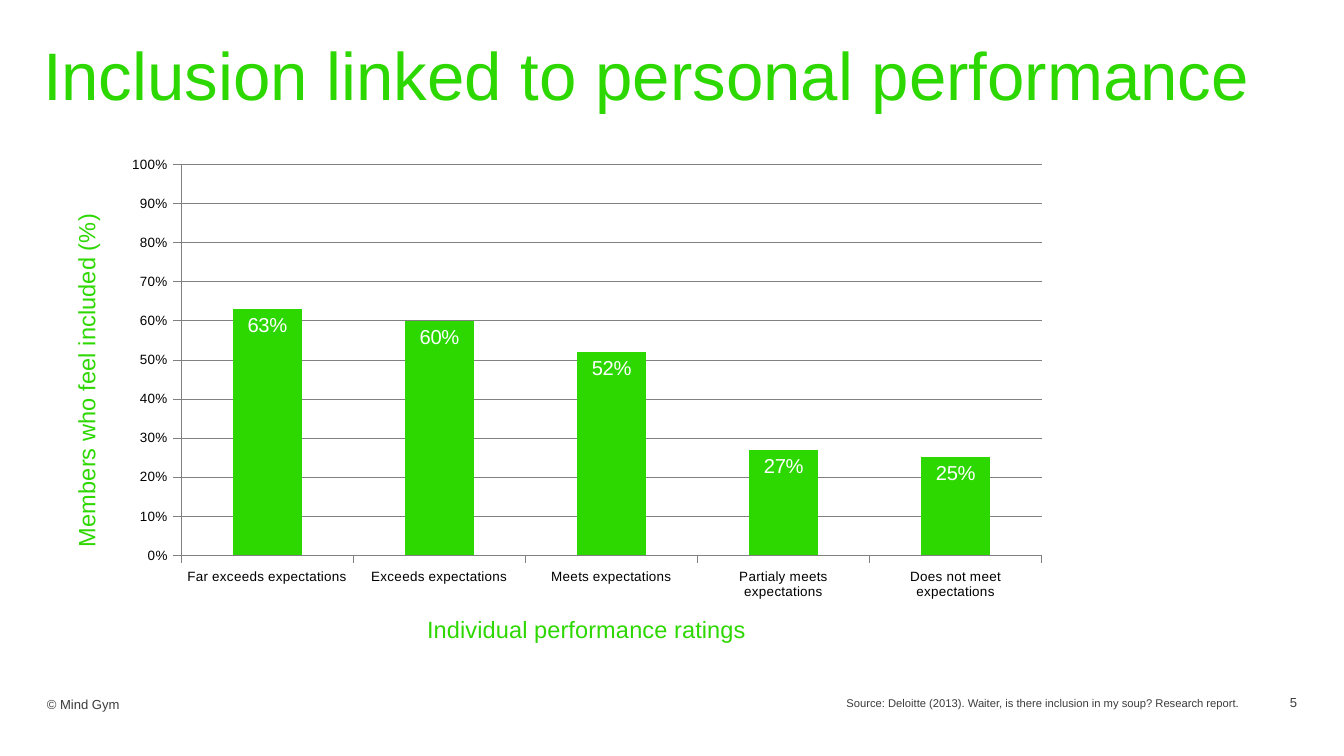
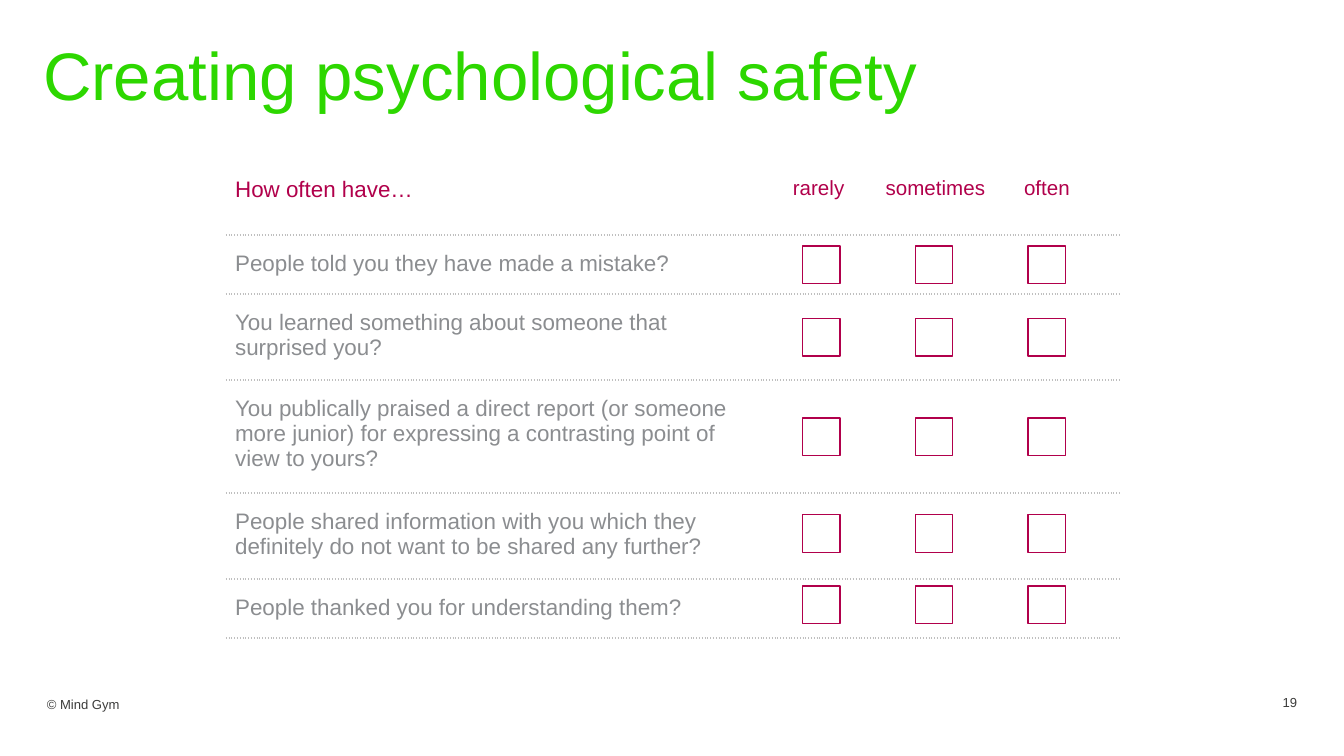
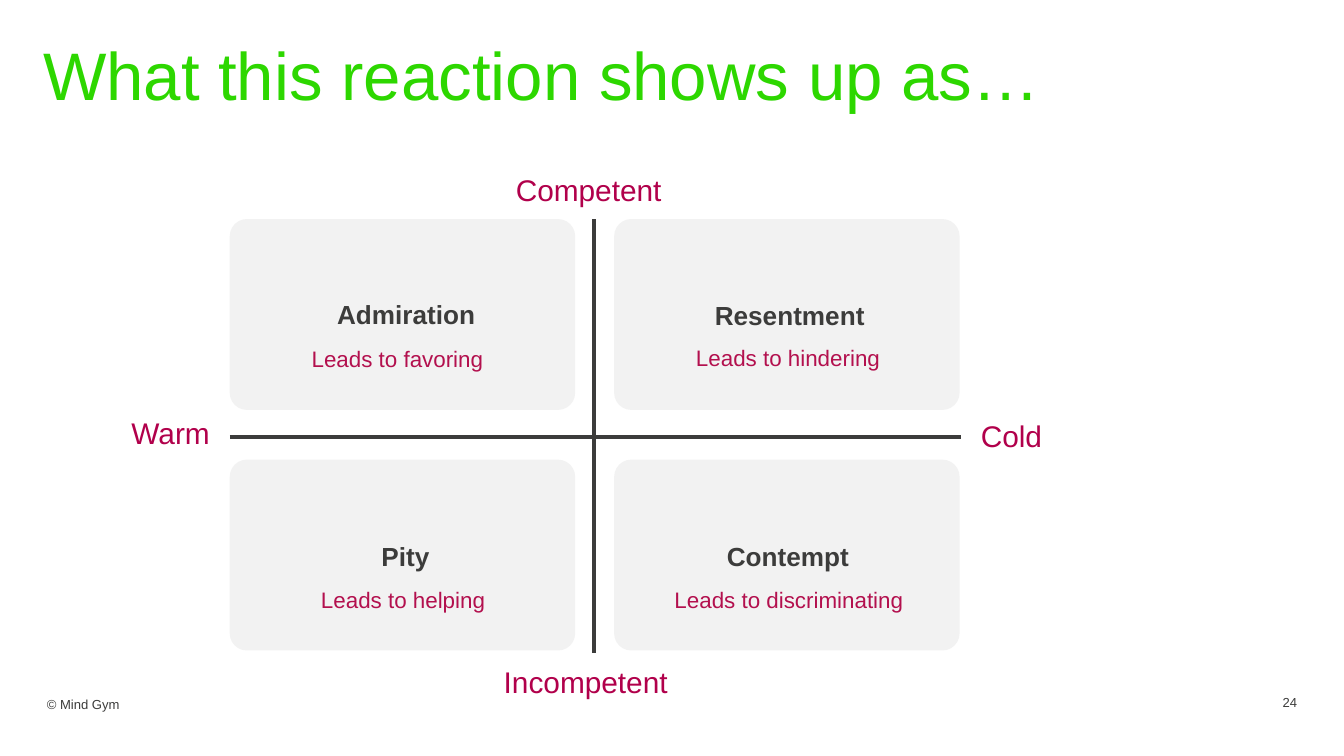
import pptx
import pptx.chart.data
import pptx.dml.color
import pptx.enum.chart
import pptx.enum.shapes
import pptx.enum.text
import pptx.oxml.ns
import pptx.util
from lxml import etree

Inches, Pt = pptx.util.Inches, pptx.util.Pt
qn = pptx.oxml.ns.qn
SHAPE = pptx.enum.shapes.MSO_SHAPE
ALIGN = pptx.enum.text.PP_ALIGN

# Shared look
FONT = "Arial"
COLORS = {
    "green": "2DD700", "ink": "3C3C3B", "wine": "B1004B", "rose": "B3104E",
    "gray": "8B8D90", "dots": "BFBFBF", "grid": "808080", "panel": "F2F2F2",
    "black": "000000", "white": "FFFFFF",
}
FOOTER = "© Mind Gym"
NO_GRID = "{2D5ABB26-0587-4C30-8999-92F81FD0307C}"

# Slide 1: inclusion chart
SOURCE = "Source: Deloitte (2013). Waiter, is there inclusion in my soup? Research report."
RATINGS = [
    ("Far exceeds expectations", 0.63),
    ("Exceeds expectations", 0.60),
    ("Meets expectations", 0.52),
    ("Partialy meets expectations", 0.27),
    ("Does not meet expectations", 0.25),
]

# Slide 2: survey; each row has its text lines, height and box top
HEADS = ["How often have…", "rarely", "sometimes", "often"]
WIDTHS = [4.15, 0.69, 0.99, 0.83]
ROWS = [
    (["People told you they have made a mistake?"], 0.43, 1.83),
    (["You learned something about someone that ", "surprised you?"], 0.63, 2.37),
    (["You publically praised a direct report (or someone more junior) "
      "for expressing a contrasting point of ", "view to yours?"], 0.83, 3.11),
    (["People shared information with you which they definitely do not "
      "want to be shared any further?"], 0.63, 3.83),
    (["People thanked you for understanding them?"], 0.43, 4.36),
]
HEAD_HIGH, TAIL_HIGH = 0.47, 0.43
BOX_LEFT, BOX_STEP, BOX_SIZE = 5.97, 0.84, 0.28

# Slide 3: quadrants; column, row, then name and effect with their places
QUADS = [
    (0, 0, ("Admiration", 2.41, 2.17, 1.24), ("Leads to favoring", 2.22, 2.52, 1.49)),
    (1, 0, ("Resentment", 5.22, 2.18, 1.43), ("Leads to hindering", 5.08, 2.51, 1.58)),
    (0, 1, ("Pity", 2.74, 3.97, 0.56), ("Leads to helping", 2.29, 4.31, 1.43)),
    (1, 1, ("Contempt", 5.31, 3.97, 1.25), ("Leads to discriminating", 4.92, 4.31, 1.92)),
]
POLES = [
    ("Competent", 3.74, 1.23, 1.3), ("Incompetent", 3.65, 4.89, 1.44),
    ("Warm", 0.88, 3.04, 0.79), ("Cold", 7.2, 3.06, 0.66),
]
QUAD_LEFT, QUAD_TOP, QUAD_WIDE, QUAD_HIGH = 1.71, 1.63, 2.57, 1.42
STEP_X, STEP_Y = 2.86, 1.79
AXES = [(4.42, 1.63, 4.42, 4.86), (1.71, 3.25, 7.15, 3.25)]


def rgb(name):
    return pptx.dml.color.RGBColor.from_string(COLORS[name])


def place(*nums):
    return [Inches(num) for num in nums]


def style(font, size, color, bold=False):
    font.name, font.size, font.bold = FONT, Pt(size), bold
    font.color.rgb = rgb(color)


def write(para, text, size, color, bold=False):
    run = para.add_run()
    run.text = text
    style(run.font, size, color, bold)


def label(slide, text, at, size, color, bold=False, flush=False, lead=None, align=None):
    frame = slide.shapes.add_textbox(*place(*at)).text_frame
    frame.word_wrap = flush
    if flush:
        frame.margin_left = frame.margin_right = 0
        frame.margin_top = frame.margin_bottom = 0
    para = frame.paragraphs[0]
    para.alignment = align
    if lead:
        para.line_spacing = Pt(lead)
    write(para, text, size, color, bold)


def start(deck, text, page, wide=8.03):
    """Add a slide with its title, copyright line and page number."""
    slide = deck.slides.add_slide(deck.slide_layouts[5])
    title = slide.shapes.title
    title.left, title.top, title.width, title.height = place(0.32, 0.35, wide, 0.57)
    frame = title.text_frame
    frame.margin_left = frame.margin_right = frame.margin_top = frame.margin_bottom = 0
    frame.vertical_anchor = pptx.enum.text.MSO_ANCHOR.TOP
    frame.auto_size = pptx.enum.text.MSO_AUTO_SIZE.NONE
    frame.word_wrap = True
    para = frame.paragraphs[0]
    para.alignment, para.line_spacing = ALIGN.LEFT, Pt(36)
    write(para, text, 36, "green")
    label(slide, FOOTER, (0.35, 5.17, 3.17, 0.19), 7, "ink", flush=True, lead=9)
    label(slide, str(page), (9.37, 5.17, 0.28, 0.12), 7, "ink", flush=True, align=ALIGN.RIGHT)
    return slide


def pin(node, spot, **sizes):
    """Fix the layout of a chart part as shares of the chart."""
    for old in node.findall(qn("c:layout")):
        node.remove(old)
    layout = etree.Element(qn("c:layout"))
    manual = etree.SubElement(layout, qn("c:manualLayout"))
    if "w" in sizes:
        etree.SubElement(manual, qn("c:layoutTarget")).set("val", "inner")
    for key in ("xMode", "yMode"):
        etree.SubElement(manual, qn("c:" + key)).set("val", "edge")
    for key, num in sizes.items():
        etree.SubElement(manual, qn("c:" + key)).set("val", str(num))
    node.insert(spot, layout)


def dress(axis, text, turn, x, y):
    """Style an axis with its ticks, line and title."""
    style(axis.tick_labels.font, 7.2, "black")
    axis.major_tick_mark = pptx.enum.chart.XL_TICK_MARK.OUTSIDE
    axis.minor_tick_mark = pptx.enum.chart.XL_TICK_MARK.NONE
    axis.format.line.color.rgb = rgb("grid")
    axis.format.line.width = Pt(0.23)
    title = axis.axis_title
    write(title.text_frame.paragraphs[0], text, 12.6, "green")
    node = title._element
    node.find(".//" + qn("a:bodyPr")).set("rot", str(turn * 60000))
    pin(node, 1, x=x, y=y)


def add_bars(slide):
    data = pptx.chart.data.CategoryChartData(number_format="0%")
    data.categories = [name for name, _ in RATINGS]
    data.add_series("Series 1", [share for _, share in RATINGS])
    kind = pptx.enum.chart.XL_CHART_TYPE.COLUMN_CLUSTERED
    chart = slide.shapes.add_chart(kind, *place(0.35, 1.09, 7.56, 3.92), data).chart
    chart.has_title = chart.has_legend = False
    style(chart.font, 16.2, "black")

    dress(chart.category_axis, "Individual performance ratings", 0, 0.37, 0.88)
    scale = chart.value_axis
    dress(scale, "Members who feel included (%)", -90, 0.02, 0.12)
    scale.minimum_scale, scale.maximum_scale, scale.major_unit = 0, 1, 0.1
    scale.tick_labels.number_format = "0%"
    scale.tick_labels.number_format_is_linked = False
    scale.has_major_gridlines = True
    scale.major_gridlines.format.line.color.rgb = rgb("grid")
    scale.major_gridlines.format.line.width = Pt(0.23)

    plot = chart.plots[0]
    plot.gap_width, plot.vary_by_categories = 150, False
    bars = plot.series[0]
    bars.format.fill.solid()
    bars.format.fill.fore_color.rgb = rgb("green")
    marks = bars.data_labels
    marks.show_value = True
    marks.number_format, marks.number_format_is_linked = "0%", False
    marks.position = pptx.enum.chart.XL_LABEL_POSITION.INSIDE_END
    style(marks.font, 10.8, "white")
    area = chart._chartSpace.find(".//" + qn("c:plotArea"))
    pin(area, 0, x=0.132, y=0.034, w=0.847, h=0.742)


def rule(cell):
    """Draw a dotted line under a cell."""
    props = cell._tc.get_or_add_tcPr()
    line = etree.SubElement(props, qn("a:lnB"), w=str(Pt(1)))
    fill = etree.SubElement(line, qn("a:solidFill"))
    etree.SubElement(fill, qn("a:srgbClr"), val=COLORS["dots"])
    etree.SubElement(line, qn("a:prstDash"), val="sysDot")


def add_survey(slide):
    highs = [HEAD_HIGH] + [high for _, high, _ in ROWS] + [TAIL_HIGH]
    at = place(1.68, 1.28, sum(WIDTHS), sum(highs))
    table = slide.shapes.add_table(len(highs), len(WIDTHS), *at).table
    table.first_row = table.horz_banding = False
    table._tbl.tblPr.find(qn("a:tableStyleId")).text = NO_GRID
    for col, wide in zip(table.columns, WIDTHS):
        col.width = Inches(wide)
    last = len(highs) - 1
    for r, high in enumerate(highs):
        table.rows[r].height = Inches(high)
        for c in range(len(WIDTHS)):
            cell = table.cell(r, c)
            if r < last:
                rule(cell)
            cell.fill.background()
            cell.margin_left = cell.margin_right = Inches(0.07)
            pad = 0.12 if c == 0 and 0 < r < last else 0.04
            cell.margin_top = cell.margin_bottom = Inches(pad)

    for c, text in enumerate(HEADS):
        write(table.cell(0, c).text_frame.paragraphs[0], text, 11 if c else 12, "wine")
    table.cell(0, 3).margin_left = Inches(0.11)
    for r, (lines, _, top) in enumerate(ROWS, 1):
        para = table.cell(r, 0).text_frame.paragraphs[0]
        for i, text in enumerate(lines):
            if i:
                para.add_line_break()
            write(para, text, 12, "gray")
        # Tick boxes
        for c in range(3):
            at = place(BOX_LEFT + c * BOX_STEP, top, BOX_SIZE, BOX_SIZE)
            box = slide.shapes.add_shape(SHAPE.RECTANGLE, *at)
            box.shadow.inherit = False
            box.fill.background()
            box.line.color.rgb = rgb("wine")
            box.line.width = Pt(0.75)


def add_quads(slide):
    for ends in AXES:
        kind = pptx.enum.shapes.MSO_CONNECTOR.STRAIGHT
        line = slide.shapes.add_connector(kind, *place(*ends))
        line.line.color.rgb = rgb("ink")
        line.line.width = Pt(2)
        etree.SubElement(line._element.spPr, qn("a:effectLst"))
    for col, row, name, effect in QUADS:
        at = place(QUAD_LEFT + col * STEP_X, QUAD_TOP + row * STEP_Y, QUAD_WIDE, QUAD_HIGH)
        panel = slide.shapes.add_shape(SHAPE.ROUNDED_RECTANGLE, *at)
        panel.adjustments[0] = 0.09
        panel.shadow.inherit = False
        panel.fill.solid()
        panel.fill.fore_color.rgb = rgb("panel")
        panel.line.fill.background()
        label(slide, name[0], (*name[1:], 0.34), 14, "ink", bold=True)
        label(slide, effect[0], (*effect[1:], 0.3), 12, "rose")
    for text, *at in POLES:
        label(slide, text, (*at, 0.37), 16, "wine")


def main():
    deck = pptx.Presentation()
    # 16:9 page
    deck.slide_width = Inches(10)
    deck.slide_height = deck.slide_width * 9 // 16

    slide = start(deck, "Inclusion linked to personal performance", 5, 9.17)
    add_bars(slide)
    label(slide, SOURCE, (6.2, 5.13, 3.17, 0.2), 6, "ink")

    add_survey(start(deck, "Creating psychological safety", 19))
    add_quads(start(deck, "What this reaction shows up as…", 24))
    deck.save("out.pptx")


if __name__ == "__main__":
    main()
